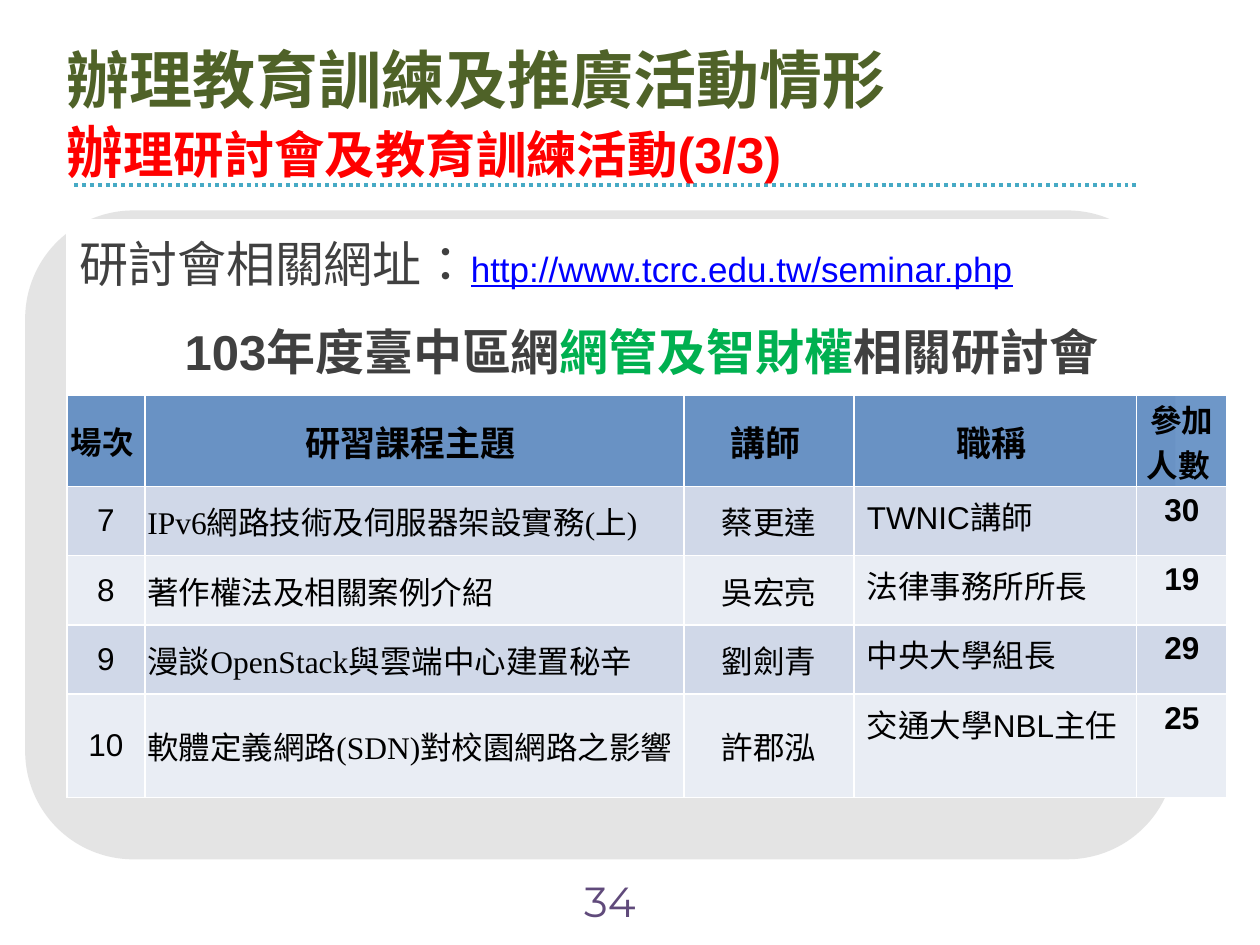
from lxml.etree import SubElement
from pptx import Presentation
from pptx.dml.color import RGBColor
from pptx.enum.dml import MSO_LINE
from pptx.enum.shapes import MSO_CONNECTOR, MSO_SHAPE
from pptx.enum.text import MSO_ANCHOR, PP_ALIGN
from pptx.oxml.ns import qn
from pptx.util import Inches, Pt

TITLE = [
    [("辦理教育訓練及推廣活動情形", 36, "4F6228")],
    [("辦", 32.4, "FF0000"), ("理研討會及教育訓練活動(3/3)", 28.8, "FF0000")],
]
LINK_LINE = [("研討會相關網址：", 28, "404040"), ("http://www.tcrc.edu.tw/seminar.php", 20, "0000FF")]
CAPTION = [("103年度臺中區網", 28, "404040"), ("網管及智財權", 28, "00B050"), ("相關研討會 ", 28, "404040")]
HEADERS = [("場次 ", 18), ("研習課程主題 ", 20), ("講師 ", 20), ("職稱 ", 20), ("參加人數 ", 18)]
SEMINARS = [
    ("7", "IPv6網路技術及伺服器架設實務(上)", "蔡更達", "TWNIC講師", "30"),
    ("8", "著作權法及相關案例介紹", "吳宏亮", "法律事務所所長", "19"),
    ("9", "漫談OpenStack與雲端中心建置秘辛", "劉劍青", "中央大學組長", "29"),
    ("10", "軟體定義網路(SDN)對校園網路之影響", "許郡泓", "交通大學NBL主任", "25"),
]
COLUMN_WIDTHS = [0.62, 4.28, 1.35, 2.24, 0.72]
ROW_HEIGHTS = [0.7, 0.7, 0.72, 0.55, 0.55, 0.55, 0.82]
BAND_COLORS = ["D0D8E8", "E9EDF4"]
CENTER, LEFT, JUSTIFY = PP_ALIGN.CENTER, PP_ALIGN.LEFT, PP_ALIGN.JUSTIFY
TOP, MIDDLE = MSO_ANCHOR.TOP, MSO_ANCHOR.MIDDLE
COLUMN_STYLES = [
    (CENTER, MIDDLE, "Arial", False, None),
    (JUSTIFY, MIDDLE, "Times New Roman", False, (0.02, 0)),
    (CENTER, MIDDLE, "Arial", False, None),
    (LEFT, TOP, "Arial", False, None),
    (CENTER, TOP, "Arial", True, None),
]


def color(value):
    return RGBColor.from_string(value)


def paint(fill, value, opacity=100):
    fill.solid()
    fill.fore_color.rgb = color(value)
    if opacity < 100:
        tint = fill._xPr.find(qn("a:solidFill"))[0]
        SubElement(tint, qn("a:alpha")).set("val", str(opacity * 1000))


def write(para, spans, bold=False, font="Arial", align=LEFT):
    para.alignment = align
    for text, size, value in spans:
        span = para.add_run()
        span.text = text
        span.font.size = Pt(size)
        span.font.name = font
        span.font.bold = bold
        span.font.color.rgb = color(value)
        span._r.get_or_add_rPr().set("lang", "zh-TW")


def add_box(page, left, top, width, height):
    box = page.shapes.add_textbox(Inches(left), Inches(top), Inches(width), Inches(height))
    box.text_frame.word_wrap = True
    box.text_frame.vertical_anchor = MIDDLE
    return box.text_frame


def set_cell(cell, spans, fill, opacity=100, anchor=TOP, insets=None, **style):
    paint(cell.fill, fill, opacity)
    cell.vertical_anchor = anchor
    if insets:
        cell.margin_left = cell.margin_right = Inches(insets[0])
        cell.margin_top = cell.margin_bottom = Inches(insets[1])
    write(cell.text_frame.paragraphs[0], spans, **style)


def add_backdrop(page):
    panel = page.shapes.add_shape(
        MSO_SHAPE.ROUNDED_RECTANGLE, Inches(0.2), Inches(1.67), Inches(9.13), Inches(5.15))
    panel.shadow.inherit = False
    panel.line.fill.background()
    paint(panel.fill, "D9D9D9", 69)
    rule = page.shapes.add_connector(
        MSO_CONNECTOR.STRAIGHT, Inches(0.59), Inches(1.47), Inches(9.02), Inches(1.47))
    rule.line.color.rgb = color("46AAC5")
    rule.line.width = Pt(2.25)
    rule.line.dash_style = MSO_LINE.ROUND_DOT
    SubElement(rule._element.spPr, qn("a:effectLst"))


def add_seminar_table(page):
    table = page.shapes.add_table(
        len(ROW_HEIGHTS), len(COLUMN_WIDTHS), Inches(0.53), Inches(1.74),
        Inches(sum(COLUMN_WIDTHS)), Inches(sum(ROW_HEIGHTS))).table
    for column, width in zip(table.columns, COLUMN_WIDTHS):
        column.width = Inches(width)
    for row, height in zip(table.rows, ROW_HEIGHTS):
        row.height = Inches(height)
    for index in range(2):
        table.cell(index, 0).merge(table.cell(index, len(COLUMN_WIDTHS) - 1))
    set_cell(table.cell(0, 0), LINK_LINE, "FFFFFF")
    table.cell(0, 0).text_frame.paragraphs[0].runs[1].font.underline = True
    set_cell(table.cell(1, 0), CAPTION, "FFFFFF", bold=True, align=CENTER)
    for column, (text, size) in enumerate(HEADERS):
        set_cell(table.cell(2, column), [(text, size, "000000")], "4F81BD", 82,
                 MIDDLE, (0, 0), bold=True, align=CENTER)
    for index, seminar in enumerate(SEMINARS):
        for column, (text, style) in enumerate(zip(seminar, COLUMN_STYLES)):
            align, anchor, font, bold, insets = style
            set_cell(table.cell(index + 3, column), [(text, 18, "000000")],
                     BAND_COLORS[index % 2], anchor=anchor, insets=insets,
                     bold=bold, font=font, align=align)


def main():
    """Build the seminar slide and save it."""
    deck = Presentation()
    deck.slide_width, deck.slide_height = Inches(10), Inches(7.5)
    page = deck.slides.add_slide(deck.slide_layouts[6])
    number = add_box(page, 4.29, 6.95, 1.1, 0.4)
    write(number.paragraphs[0], [("34", 24, "604A7B")], font="Montserrat", align=CENTER)
    add_backdrop(page)
    title = add_box(page, 0.43, 0.35, 7.81, 1.09)
    write(title.paragraphs[0], TITLE[0], bold=True)
    write(title.add_paragraph(), TITLE[1], bold=True)
    add_seminar_table(page)
    deck.save("out.pptx")


if __name__ == "__main__":
    main()
